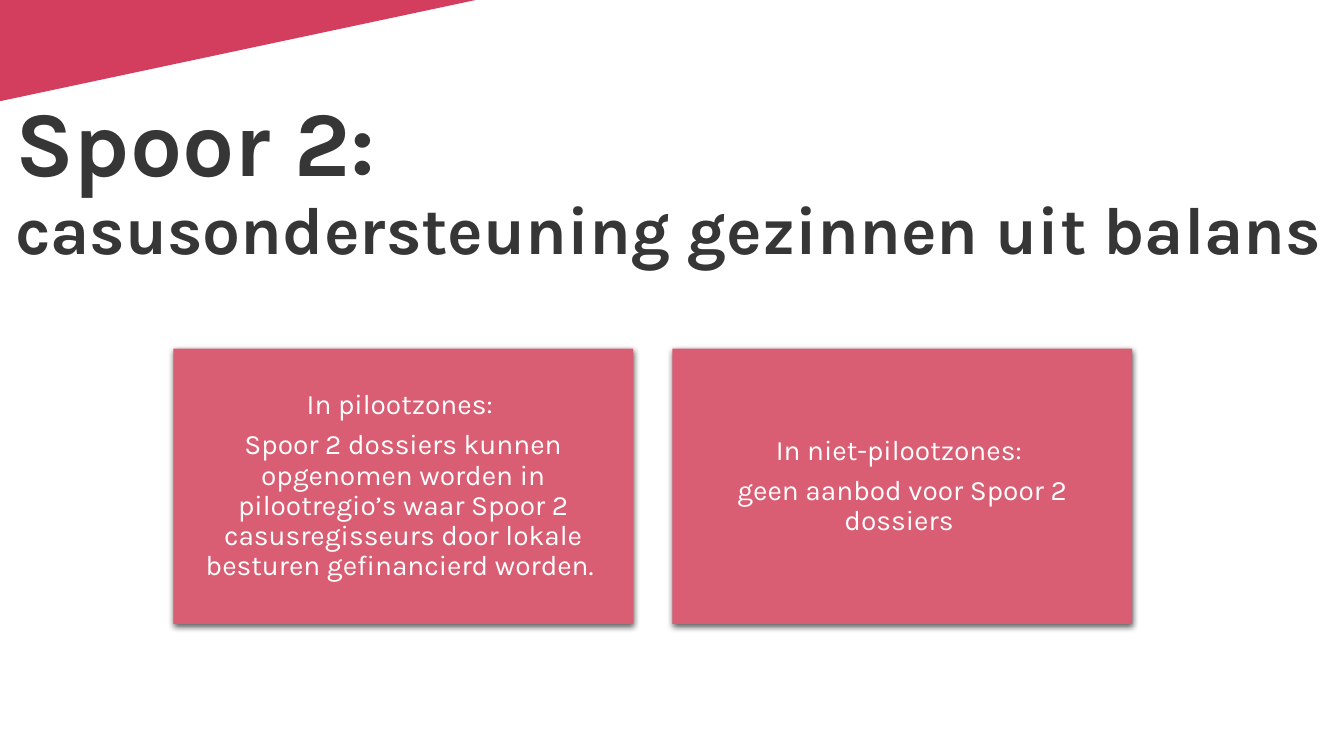
import pptx
import pptx.dml.color
import pptx.enum.shapes
import pptx.enum.text
import pptx.oxml
import pptx.oxml.ns
import pptx.util
from pptx.dml.color import RGBColor
from pptx.util import Inches

CRIMSON = RGBColor(0xD4, 0x3E, 0x5E)
ROSE = RGBColor(0xDA, 0x5E, 0x73)
CHARCOAL = RGBColor(0x37, 0x36, 0x36)
WHITE = RGBColor(0xFF, 0xFF, 0xFF)
FONT = "Karla"

CARD_LEFT, CARD_TOP = 1.72, 3.46
CARD_WIDTH, CARD_HEIGHT = 4.56, 2.73
CARD_STEP = 4.95
CARDS = [
    ("In pilootzones: ",
     "Spoor 2 dossiers kunnen opgenomen worden in pilootregio’s waar "
     "Spoor 2 casusregisseurs door lokale besturen gefinancierd worden. "),
    ("In niet-pilootzones: ",
     "geen aanbod voor Spoor 2 dossiers "),
]

SHADOW = (
    f'<a:outerShdw {pptx.oxml.ns.nsdecls("a")} blurRad="57150" dist="19050" '
    'dir="5400000" algn="ctr" rotWithShape="0">'
    '<a:srgbClr val="000000"><a:alpha val="63000"/></a:srgbClr></a:outerShdw>'
)


def add_span(para, text, *, size, color, bold=False):
    span = para.add_run()
    span.text = text
    span.font.name = FONT
    span.font.size = pptx.util.Pt(size)
    span.font.color.rgb = color
    span.font.bold = bold


def prepare_frame(shape, anchor, inset):
    frame = shape.text_frame
    frame.word_wrap = True
    frame.vertical_anchor = anchor
    frame.margin_left = frame.margin_right = Inches(inset)
    frame.margin_top = frame.margin_bottom = Inches(inset)
    return frame


def fill_plain(shape, color):
    shape.shadow.inherit = False
    shape.fill.solid()
    shape.fill.fore_color.rgb = color
    shape.line.fill.background()


def add_corner(page):
    builder = page.shapes.build_freeform(0, 0)
    outline = [(4.72, 0), (0.02, 1), (0, 1)]
    builder.add_line_segments([(Inches(x), Inches(y)) for x, y in outline])
    fill_plain(builder.convert_to_shape(), CRIMSON)


def add_title(page):
    box = page.shapes.add_textbox(
        Inches(0.15), Inches(0.18), Inches(14.22), Inches(2.49))
    frame = prepare_frame(box, pptx.enum.text.MSO_ANCHOR.BOTTOM, 0)
    para = frame.paragraphs[0]
    para.line_spacing = 0.9
    add_span(para, "Spoor 2:", size=66, color=CHARCOAL, bold=True)
    para.add_line_break()
    add_span(para, "casusondersteuning gezinnen uit balans",
             size=48, color=CHARCOAL, bold=True)


def add_card(page, left, texts):
    card = page.shapes.add_shape(
        pptx.enum.shapes.MSO_SHAPE.RECTANGLE, Inches(left), Inches(CARD_TOP),
        Inches(CARD_WIDTH), Inches(CARD_HEIGHT))
    fill_plain(card, ROSE)
    effects = card._element.spPr.find(pptx.oxml.ns.qn("a:effectLst"))
    effects.append(pptx.oxml.parse_xml(SHADOW))
    frame = prepare_frame(card, pptx.enum.text.MSO_ANCHOR.MIDDLE, 0.08)
    for index, text in enumerate(texts):
        para = frame.add_paragraph() if index else frame.paragraphs[0]
        para.alignment = pptx.enum.text.PP_ALIGN.CENTER
        para.line_spacing = 0.9
        para.space_after = pptx.util.Pt(7)
        add_span(para, text, size=20, color=WHITE)


def main():
    deck = pptx.Presentation()
    deck.slide_width = Inches(13.33)
    deck.slide_height = Inches(7.5)
    page = deck.slides.add_slide(deck.slide_layouts[6])
    add_corner(page)
    add_title(page)
    for index, texts in enumerate(CARDS):
        add_card(page, CARD_LEFT + index * CARD_STEP, texts)
    deck.save("out.pptx")


if __name__ == "__main__":
    main()
